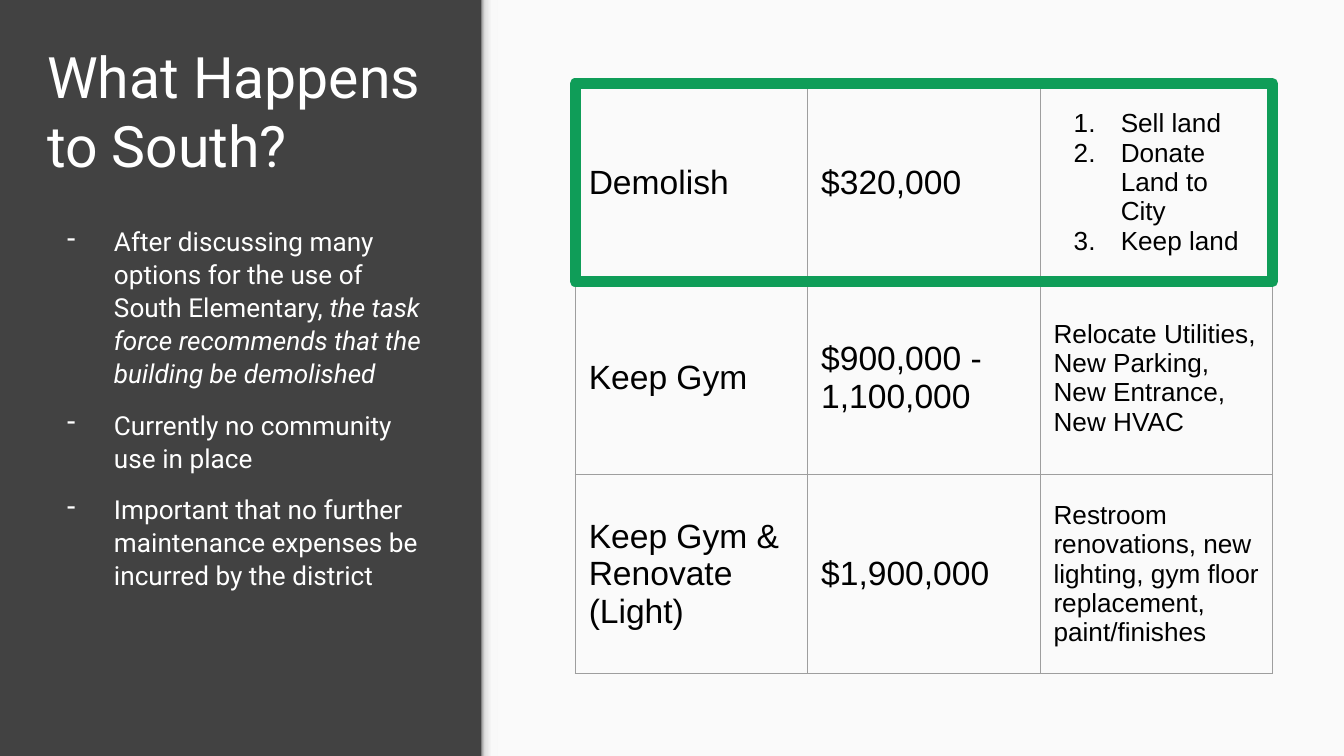
import pptx
import pptx.util
import pptx.oxml
import pptx.oxml.ns
import pptx.dml.color
import pptx.enum.text
import pptx.enum.shapes

Pt = pptx.util.Pt
ANCHOR = pptx.enum.text.MSO_ANCHOR
RECT = pptx.enum.shapes.MSO_SHAPE.RECTANGLE
NS = pptx.oxml.ns.nsdecls("a")

COLORS = {"dark": "424242", "light": "FAFAFA", "white": "FFFFFF",
          "black": "000000", "grid": "9E9E9E", "green": "0F9D58"}
SHADE = [(0, "999999"), (20, "DEDEDE"), (64, "F9F9F9"), (100, "F9F9F9")]

TITLE = "What Happens to South?"
# Each point is a list of (text, italic) runs.
POINTS = [
    [("After discussing many options for the use of South Elementary, ", False),
     ("the task force recommends that the building be demolished", True)],
    [("Currently no community use in place", False)],
    [("Important that no further maintenance expenses be incurred by the district",
      False)],
]
OPTIONS = [
    ("Demolish", "$320,000", ["Sell land", "Donate Land to City", "Keep land"]),
    ("Keep Gym", "$900,000 - 1,100,000",
     "Relocate Utilities, New Parking, New Entrance, New HVAC"),
    ("Keep Gym & Renovate (Light)", "$1,900,000",
     "Restroom renovations, new lighting, gym floor replacement, paint/finishes"),
]

WIDE, HIGH = 720, 405
SPLIT = 258
PAD = 7.2
LEFT, TOP = 308.2, 44.8
COL = 124.5
ROWS = [106, 103.5, 106.5]
SIZES = [18, 18, 14]


def rgb(name):
    return pptx.dml.color.RGBColor.from_string(COLORS[name])


def style(para, size, font, color):
    para.font.size = Pt(size)
    para.font.name = font
    para.font.color.rgb = rgb(color)


def bullet(para, mark, color):
    """Give a paragraph a hanging indent and a bullet element."""
    props = para._p.get_or_add_pPr()
    props.set("marL", str(Pt(36)))
    props.set("indent", str(Pt(-25.2)))
    props.append(pptx.oxml.parse_xml(
        f'<a:buClr {NS}><a:srgbClr val="{COLORS[color]}"/></a:buClr>'))
    props.append(pptx.oxml.parse_xml(f"<a:{mark} {NS}/>"))


def set_frame(frame, anchor):
    frame.word_wrap = True
    frame.auto_size = pptx.enum.text.MSO_AUTO_SIZE.NONE
    frame.vertical_anchor = anchor
    frame.margin_left = frame.margin_right = Pt(PAD)
    frame.margin_top = frame.margin_bottom = Pt(PAD)


def add_rect(slide, *place):
    shape = slide.shapes.add_shape(RECT, *map(Pt, place))
    shape.shadow.inherit = False
    shape.line.fill.background()
    return shape


def add_panel(slide):
    """Draw the light right side and the soft shade along its left edge."""
    panel = add_rect(slide, SPLIT, 0, WIDE - SPLIT, HIGH)
    panel.fill.solid()
    panel.fill.fore_color.rgb = rgb("light")
    edge = add_rect(slide, SPLIT, 0, 8.6, HIGH)
    edge.fill.gradient()
    edge.fill.gradient_angle = 0
    stops = edge._element.spPr.find(".//" + pptx.oxml.ns.qn("a:gsLst"))
    for stop in list(stops):
        stops.remove(stop)
    for spot, color in SHADE:
        stops.append(pptx.oxml.parse_xml(
            f'<a:gs {NS} pos="{spot * 1000}"><a:srgbClr val="{color}"/></a:gs>'))


def add_title(slide):
    title = slide.shapes.title
    title.left, title.top, title.width, title.height = map(Pt, (18, 28, 221, 75))
    set_frame(title.text_frame, ANCHOR.BOTTOM)
    title.text_frame.text = TITLE
    para = title.text_frame.paragraphs[0]
    para.alignment = pptx.enum.text.PP_ALIGN.LEFT
    style(para, 30.6, "Roboto", "white")


def add_points(slide):
    frame = slide.shapes.add_textbox(*map(Pt, (18, 113, 221, 274))).text_frame
    set_frame(frame, ANCHOR.TOP)
    for i, runs in enumerate(POINTS):
        para = frame.add_paragraph() if i else frame.paragraphs[0]
        bullet(para, 'buChar char="-"', "white")
        para.line_spacing = 1.05
        if i:
            para.space_before = Pt(10)
        style(para, 14, "Roboto", "white")
        for text, italic in runs:
            run = para.add_run()
            run.text = text
            if italic:
                run.font.italic = True


def fill_cell(cell, text, size):
    cell.vertical_anchor = ANCHOR.MIDDLE
    cell.margin_left = cell.margin_right = Pt(PAD)
    cell.margin_top = cell.margin_bottom = Pt(PAD)
    props = cell._tc.get_or_add_tcPr()
    for side in "LRTB":
        props.append(pptx.oxml.parse_xml(
            f'<a:ln{side} {NS} w="{Pt(0.75)}"><a:solidFill>'
            f'<a:srgbClr val="{COLORS["grid"]}"/></a:solidFill></a:ln{side}>'))
    cell.fill.background()
    listed = isinstance(text, list)
    cell.text_frame.text = "\n".join(text) if listed else text
    for para in cell.text_frame.paragraphs:
        if listed:
            bullet(para, 'buAutoNum type="arabicPeriod"', "black")
        style(para, size, "Arial", "black")


def add_options(slide):
    table = slide.shapes.add_table(
        len(OPTIONS), len(SIZES), Pt(LEFT), Pt(TOP),
        Pt(COL * len(SIZES)), Pt(sum(ROWS))).table
    table.first_row = table.horz_banding = False
    for col in table.columns:
        col.width = Pt(COL)
    for r, (row, high) in enumerate(zip(OPTIONS, ROWS)):
        table.rows[r].height = Pt(high)
        for c, (text, size) in enumerate(zip(row, SIZES)):
            fill_cell(table.cell(r, c), text, size)

    choice = add_rect(slide, LEFT, TOP, COL * len(SIZES), ROWS[0])
    choice.fill.background()
    choice.line.color.rgb = rgb("green")
    choice.line.width = Pt(6)


def main():
    deck = pptx.Presentation()
    deck.slide_width, deck.slide_height = Pt(WIDE), Pt(HIGH)
    slide = deck.slides.add_slide(deck.slide_layouts.get_by_name("Title Only"))
    slide.background.fill.solid()
    slide.background.fill.fore_color.rgb = rgb("dark")
    add_panel(slide)
    add_title(slide)
    add_points(slide)
    add_options(slide)
    deck.save("out.pptx")


if __name__ == "__main__":
    main()
